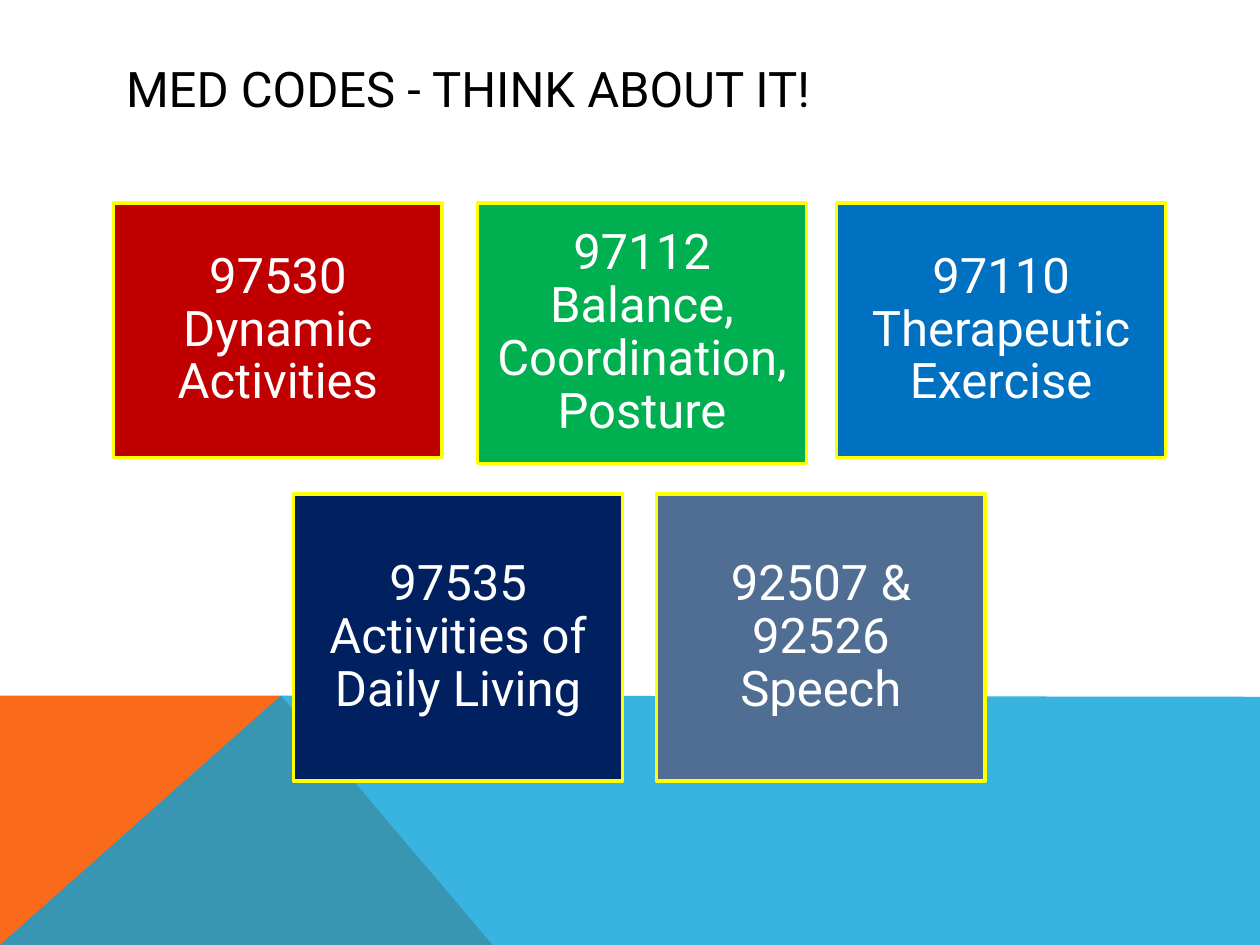
"""Build the MED codes slide with five code cards over a two-tone footer."""
from dataclasses import dataclass

from lxml.etree import SubElement
from pptx import Presentation
from pptx.dml.color import RGBColor as RGB
from pptx.enum.shapes import MSO_SHAPE as SHAPE
from pptx.enum.text import MSO_ANCHOR as ANCHOR, MSO_AUTO_SIZE as AUTO, PP_ALIGN as ALIGN
from pptx.oxml.ns import qn
from pptx.util import Inches, Pt

COLORS = {
    "black": "000000", "white": "FFFFFF", "orange": "F96A1B", "sky": "08A1D9",
    "yellow": "FFFF00", "red": "C00000", "green": "00B050", "blue": "0070C0",
    "navy": "002060", "slate": "506E94",
}
CARD_WIDTH = 2.61


@dataclass
class Band:
    points: list[tuple[float, float]]
    color: str
    opacity: int = 100


@dataclass
class Card:
    text: str
    left: float
    top: float
    height: float
    color: str


BANDS = [
    Band([(0, 7.5), (0, 5.52), (2.23, 5.52), (3.91, 7.5)], "orange"),
    Band([(0, 7.5), (2.23, 5.52), (10, 5.53), (10, 7.5)], "sky", 80),
]
CARDS = [
    Card("97530 Dynamic Activities", 0.9, 1.61, 2.02, "red"),
    Card("97112 Balance, Coordination, Posture", 3.79, 1.61, 2.07, "green"),
    Card("97110 Therapeutic Exercise", 6.64, 1.61, 2.02, "blue"),
    Card("97535 Activities of Daily Living", 2.33, 3.92, 2.28, "navy"),
    Card("92507 & 92526 Speech", 5.21, 3.92, 2.28, "slate"),
]


def rgb(name: str) -> RGB:
    return RGB.from_string(COLORS[name])


def write_text(sp, text: str, *, color: str, align=ALIGN.LEFT, size: float = 28,
               spacing: float = 1.0, inset: float | None = None) -> None:
    tf = sp.text_frame
    tf.word_wrap = True
    tf.auto_size = AUTO.NONE
    tf.vertical_anchor = ANCHOR.MIDDLE
    if inset is not None:
        tf.margin_left = tf.margin_right = Inches(inset)
        tf.margin_top = tf.margin_bottom = Inches(inset)
    p = tf.paragraphs[0]
    p.alignment = align
    p.line_spacing = spacing
    r = p.add_run()
    r.text = text
    r.font.name = "Roboto"
    r.font.size = Pt(size)
    r.font.color.rgb = rgb(color)


def draw_band(slide, band: Band) -> None:
    start, *rest = [(Inches(x), Inches(y)) for x, y in band.points]
    builder = slide.shapes.build_freeform(*start)
    builder.add_line_segments(rest, close=True)
    sp = builder.convert_to_shape()
    sp.shadow.inherit = False
    sp.fill.solid()
    sp.fill.fore_color.rgb = rgb(band.color)
    sp.line.fill.background()
    if band.opacity < 100:
        color = sp.element.spPr.find(qn("a:solidFill")).find(qn("a:srgbClr"))
        SubElement(color, qn("a:alpha"), val=str(band.opacity * 1000))


def draw_card(slide, card: Card) -> None:
    sp = slide.shapes.add_shape(SHAPE.RECTANGLE, Inches(card.left), Inches(card.top),
                                Inches(CARD_WIDTH), Inches(card.height))
    sp.shadow.inherit = False
    sp.fill.solid()
    sp.fill.fore_color.rgb = rgb(card.color)
    sp.line.color.rgb = rgb("yellow")
    sp.line.width = Pt(2)
    write_text(sp, card.text, color="white", align=ALIGN.CENTER, spacing=0.9, inset=0.12)


def main() -> None:
    prs = Presentation()
    prs.slide_width, prs.slide_height = Inches(10), Inches(7.5)
    slide = prs.slides.add_slide(prs.slide_layouts[5])
    title = slide.shapes.title
    title.left, title.top = Inches(0.9), Inches(0.4)
    title.width, title.height = Inches(8.22), Inches(0.6)
    write_text(title, "MED CODES - THINK ABOUT IT!", color="black")
    for band in BANDS:
        draw_band(slide, band)
    for card in CARDS:
        draw_card(slide, card)
    prs.save("out.pptx")


if __name__ == "__main__":
    main()
